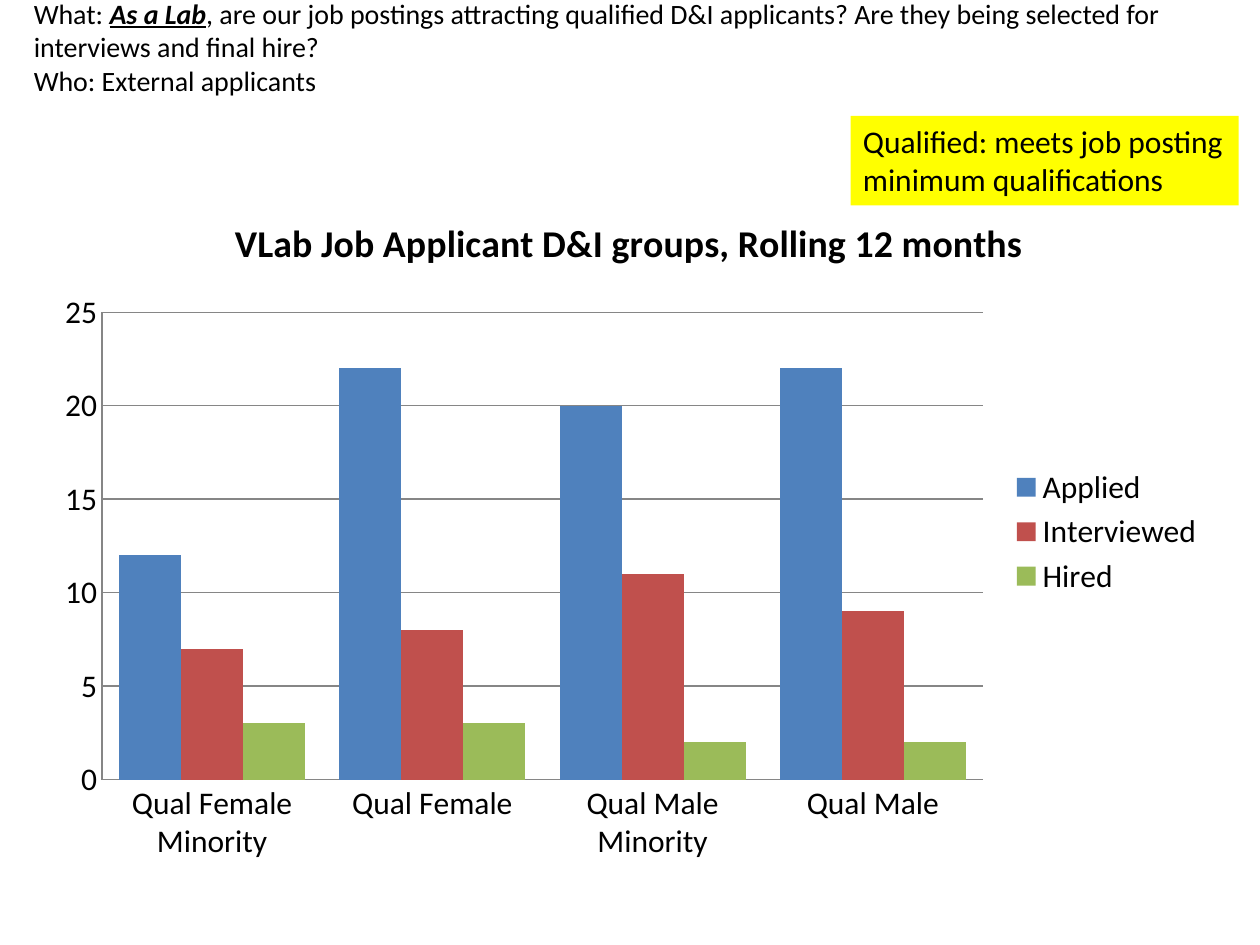
import pptx
import pptx.util
import pptx.chart.data
import pptx.dml.color
import pptx.enum.chart
import pptx.enum.shapes
import pptx.enum.text

Inches, Pt = pptx.util.Inches, pptx.util.Pt
RGBColor = pptx.dml.color.RGBColor

FONT = "Calibri"
BLACK = RGBColor(0x00, 0x00, 0x00)
YELLOW = RGBColor(0xFF, 0xFF, 0x00)
GREY = RGBColor(0x86, 0x86, 0x86)
BLUE = RGBColor(0x4F, 0x81, 0xBD)
RED = RGBColor(0xC0, 0x50, 0x4D)
GREEN = RGBColor(0x9B, 0xBB, 0x59)

QUESTIONS = [
    [("What: ", {}),
     ("As a Lab", {"bold": True, "italic": True, "underline": True}),
     (", are our job postings attracting qualified D&I applicants? "
      "Are they being selected for interviews and final hire?", {})],
    [("Who: External applicants", {})],
]
DEFINITION = [[("Qualified: meets job posting minimum qualifications", {})]]

CHART_TITLE = "VLab Job Applicant D&I groups, Rolling 12 months"
GROUPS = ["Qual Female Minority", "Qual Female", "Qual Male Minority", "Qual Male"]
STAGES = [
    ("Applied", (12, 22, 20, 22), BLUE),
    ("Interviewed", (7, 8, 11, 9), RED),
    ("Hired", (3, 3, 2, 2), GREEN),
]


def format_font(font, size, **values):
    font.color.rgb = BLACK
    for name, value in {"name": FONT, "size": Pt(size), **values}.items():
        setattr(font, name, value)


def write_paragraphs(tf, paragraphs, size):
    tf.word_wrap = True
    for i, runs in enumerate(paragraphs):
        p = tf.paragraphs[0] if i == 0 else tf.add_paragraph()
        p.alignment = pptx.enum.text.PP_ALIGN.LEFT
        for text, values in runs:
            r = p.add_run()
            r.text = text
            format_font(r.font, size, **values)


def add_questions(s, box):
    sp = s.shapes.add_textbox(*box)
    write_paragraphs(sp.text_frame, QUESTIONS, 16)


def add_definition(s, box):
    sp = s.shapes.add_shape(pptx.enum.shapes.MSO_SHAPE.RECTANGLE, *box)
    sp.shadow.inherit = False
    sp.fill.solid()
    sp.fill.fore_color.rgb = YELLOW
    sp.line.fill.background()
    sp.text_frame.vertical_anchor = pptx.enum.text.MSO_ANCHOR.TOP
    write_paragraphs(sp.text_frame, DEFINITION, 18)


def add_applicant_chart(s, box):
    data = pptx.chart.data.CategoryChartData()
    data.categories = GROUPS
    for name, values, _ in STAGES:
        data.add_series(name, values)
    kind = pptx.enum.chart.XL_CHART_TYPE.COLUMN_CLUSTERED
    chart = s.shapes.add_chart(kind, *box, data).chart
    format_font(chart.font, 18)

    chart.has_title = True
    tf = chart.chart_title.text_frame
    tf.text = CHART_TITLE
    format_font(tf.paragraphs[0].runs[0].font, 21.6, bold=True)
    chart.chart_title.include_in_layout = False

    chart.has_legend = True
    chart.legend.position = pptx.enum.chart.XL_LEGEND_POSITION.RIGHT
    chart.legend.include_in_layout = False

    plot = chart.plots[0]
    plot.gap_width = 55
    plot.vary_by_categories = False
    for series, (_, _, color) in zip(plot.series, STAGES):
        series.format.fill.solid()
        series.format.fill.fore_color.rgb = color

    axes = chart.category_axis, chart.value_axis
    for axis in axes:
        axis.major_tick_mark = pptx.enum.chart.XL_TICK_MARK.NONE
    chart.value_axis.has_major_gridlines = True
    for part in (*axes, chart.value_axis.major_gridlines):
        part.format.line.color.rgb = GREY
        part.format.line.width = Pt(0.75)
    chart.value_axis.minimum_scale = 0
    chart.value_axis.maximum_scale = 25
    chart.value_axis.major_unit = 5


def main():
    prs = pptx.Presentation()
    prs.slide_width, prs.slide_height = Inches(10), Inches(7.5)
    s = prs.slides.add_slide(prs.slide_layouts.get_by_name("Blank"))
    add_questions(s, [Inches(v) for v in (0.17, -0.08, 9.67, 1.72)])
    add_applicant_chart(s, [Inches(v) for v in (0.33, 1.5, 9.33, 5.44)])
    add_definition(s, [Inches(v) for v in (6.75, 0.92, 3.08, 0.71)])
    prs.save("out.pptx")


if __name__ == "__main__":
    main()
